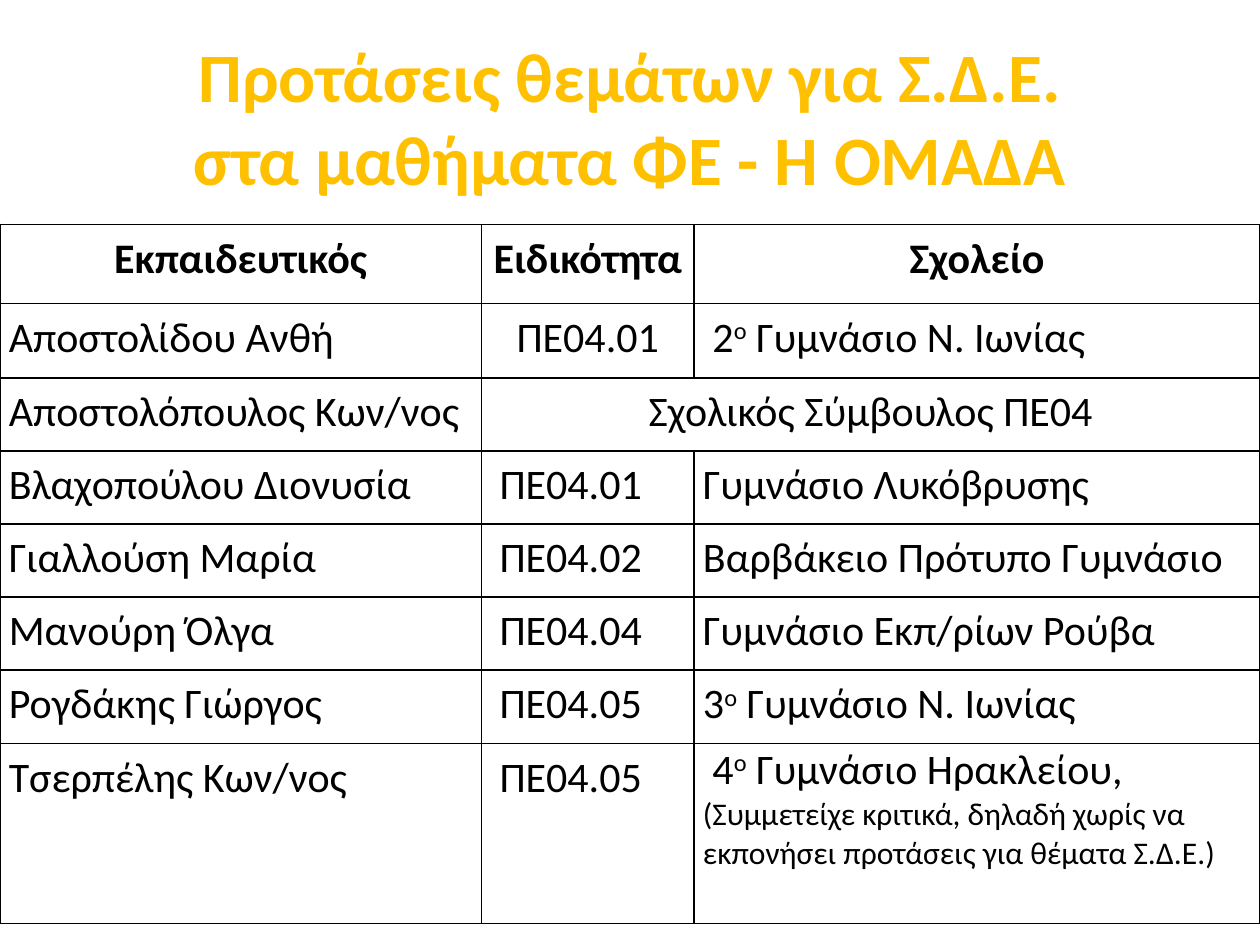
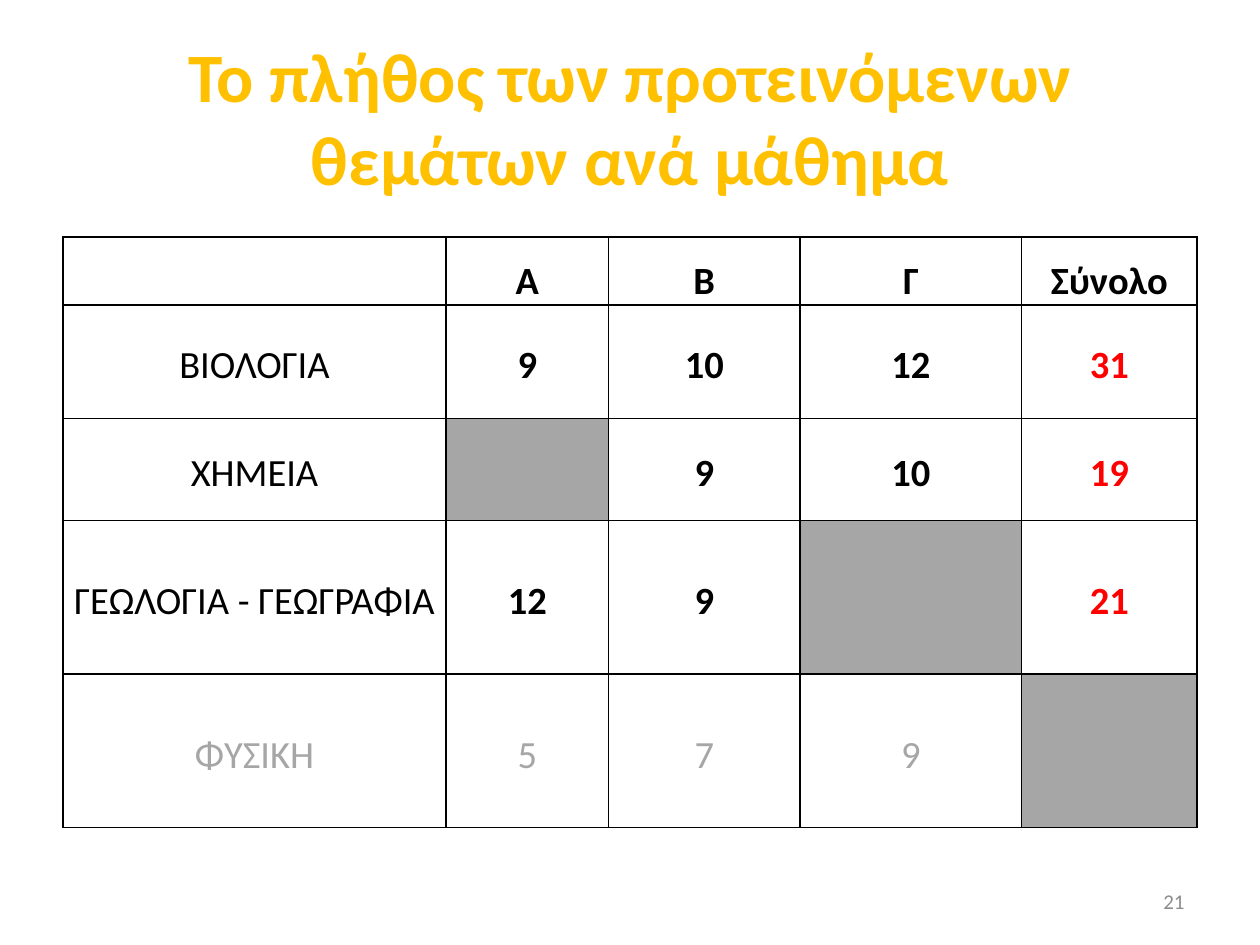
import pptx
import pptx.util
import pptx.dml.color
import pptx.enum.text
import pptx.oxml
import pptx.oxml.ns
from pptx.util import Inches

GOLD = pptx.dml.color.RGBColor(0xFF, 0xC0, 0x00)
BLACK = pptx.dml.color.RGBColor(0x00, 0x00, 0x00)
RED = pptx.dml.color.RGBColor(0xFF, 0x00, 0x00)
GREY = pptx.dml.color.RGBColor(0xA6, 0xA6, 0xA6)
FOOTER_GREY = pptx.dml.color.RGBColor(0x8C, 0x8C, 0x8C)
FONT = "Calibri"
ALIGN = pptx.enum.text.PP_ALIGN
ANCHOR = pptx.enum.text.MSO_ANCHOR
NAMESPACE = pptx.oxml.ns.nsdecls("a")


def add_run(paragraph, text, size, color=BLACK, bold=False):
    run = paragraph.add_run()
    run.text = text
    run.font.name = FONT
    run.font.size = pptx.util.Pt(size)
    run.font.bold = bold
    run.font.color.rgb = color
    return run


def add_grid(slide, left, top, widths, heights, side_margin):
    grid = slide.shapes.add_table(
        len(heights), len(widths), Inches(left), Inches(top),
        Inches(sum(widths)), Inches(sum(heights))).table
    grid.first_row = False
    grid.horz_banding = False
    for column, width in zip(grid.columns, widths):
        column.width = Inches(width)
    for row, height in zip(grid.rows, heights):
        row.height = Inches(height)
    for cell in grid.iter_cells():
        cell.margin_left = cell.margin_right = Inches(side_margin)
        cell.margin_top = Inches(0.01)
        cell.margin_bottom = 0
        properties = cell._tc.get_or_add_tcPr()
        for side in ("lnL", "lnR", "lnT", "lnB"):
            properties.append(pptx.oxml.parse_xml(
                f'<a:{side} {NAMESPACE} w="12700"><a:solidFill>'
                f'<a:srgbClr val="{BLACK}"/></a:solidFill></a:{side}>'))
        cell.fill.background()
    return grid


deck = pptx.Presentation()
deck.slide_width = Inches(10)
deck.slide_height = Inches(7.5)

titles = [
    ["Προτάσεις θεμάτων για Σ.Δ.Ε.", "στα μαθήματα ΦΕ - Η ΟΜΑΔΑ"],
    ["Το πλήθος των προτεινόμενων θεμάτων ανά μάθημα"],
]
slides = []
for title_lines in titles:
    slide = deck.slides.add_slide(deck.slide_layouts[6])
    slides.append(slide)
    title = slide.shapes.add_textbox(Inches(0.5), Inches(0.3), Inches(9), Inches(1.25)).text_frame
    title.word_wrap = True
    title.vertical_anchor = ANCHOR.MIDDLE
    heading = title.paragraphs[0]
    heading.alignment = ALIGN.CENTER
    for index, line in enumerate(title_lines):
        if index:
            heading.add_line_break()
        add_run(heading, line, 39.6, GOLD, True)
teachers_slide, totals_slide = slides

teachers = [
    ["Εκπαιδευτικός", "Ειδικότητα", "Σχολείο"],
    ["Αποστολίδου Ανθή", "ΠΕ04.01", " 2^ο^ Γυμνάσιο Ν. Ιωνίας"],
    ["Αποστολόπουλος Κων/νος", "Σχολικός Σύμβουλος ΠΕ04"],
    ["Βλαχοπούλου Διονυσία", " ΠΕ04.01", "Γυμνάσιο Λυκόβρυσης"],
    ["Γιαλλούση Μαρία", " ΠΕ04.02", "Βαρβάκειο Πρότυπο Γυμνάσιο"],
    ["Μανούρη Όλγα", " ΠΕ04.04", "Γυμνάσιο Εκπ/ρίων Ρούβα"],
    ["Ρογδάκης Γιώργος", " ΠΕ04.05", "3^ο^ Γυμνάσιο Ν. Ιωνίας"],
    ["Τσερπέλης Κων/νος", " ΠΕ04.05", " 4^ο^ Γυμνάσιο Ηρακλείου,"],
]
centred_rows = (1, 2)
teacher_grid = add_grid(teachers_slide, 0, 1.78, [3.82, 1.69, 4.49],
                        [0.63, 0.59] + [0.58] * 5 + [1.43], 0.07)
teacher_grid.cell(2, 1).merge(teacher_grid.cell(2, 2))
for row, entries in enumerate(teachers):
    for column, entry in enumerate(entries):
        paragraph = teacher_grid.cell(row, column).text_frame.paragraphs[0]
        if (row, column) != (7, 2):
            paragraph.line_spacing = 1.15
            paragraph.space_before = pptx.util.Pt(6)
        if row == 0:
            paragraph.space_after = pptx.util.Pt(10)
        if row == 0 or (column == 1 and row in centred_rows):
            paragraph.alignment = ALIGN.CENTER
        for part, text in enumerate(entry.split("^")):
            run = add_run(paragraph, text, 24, bold=row == 0)
            if part == 1:
                run.font._element.set("baseline", "30000")
remark = teacher_grid.cell(7, 2).text_frame.add_paragraph()
add_run(remark, "(Συμμετείχε κριτικά, δηλαδή χωρίς να εκπονήσει προτάσεις για θέματα Σ.Δ.Ε.)", 18)

totals = [
    ["", "Α", "Β", "Γ", "Σύνολο"],
    ["ΒΙΟΛΟΓΙΑ", "9", "10", "12", "31"],
    ["ΧΗΜΕΙΑ", "", "9", "10", "19"],
    ["ΓΕΩΛΟΓΙΑ - ΓΕΩΓΡΑΦΙΑ", "12", "9", "", "21"],
    ["ΦΥΣΙΚΗ", "5", "7", "9", ""],
]
totals_grid = add_grid(totals_slide, 0.5, 1.88, [3.04, 1.29, 1.52, 1.76, 1.39],
                       [0.54, 0.9, 0.81, 1.22, 1.22], 0.01)
for row, entries in enumerate(totals):
    for column, entry in enumerate(entries):
        cell = totals_grid.cell(row, column)
        if not entry:
            if row:
                cell.fill.solid()
                cell.fill.fore_color.rgb = GREY
            continue
        cell.vertical_anchor = ANCHOR.MIDDLE if row else ANCHOR.BOTTOM
        paragraph = cell.text_frame.paragraphs[0]
        paragraph.alignment = ALIGN.CENTER
        paragraph.line_spacing = 1.15
        paragraph.space_after = pptx.util.Pt(10)
        physics = row == 4
        color = GREY if physics else RED if row and column == 4 else BLACK
        add_run(paragraph, entry, 22, color, column > 0 and not physics)

footer = totals_slide.shapes.add_textbox(Inches(7.17), Inches(6.95), Inches(2.33), Inches(0.4)).text_frame
footer.word_wrap = True
footer.vertical_anchor = ANCHOR.MIDDLE
footer.paragraphs[0].alignment = ALIGN.RIGHT
add_run(footer.paragraphs[0], "21", 12, FOOTER_GREY)

deck.save("out.pptx")
